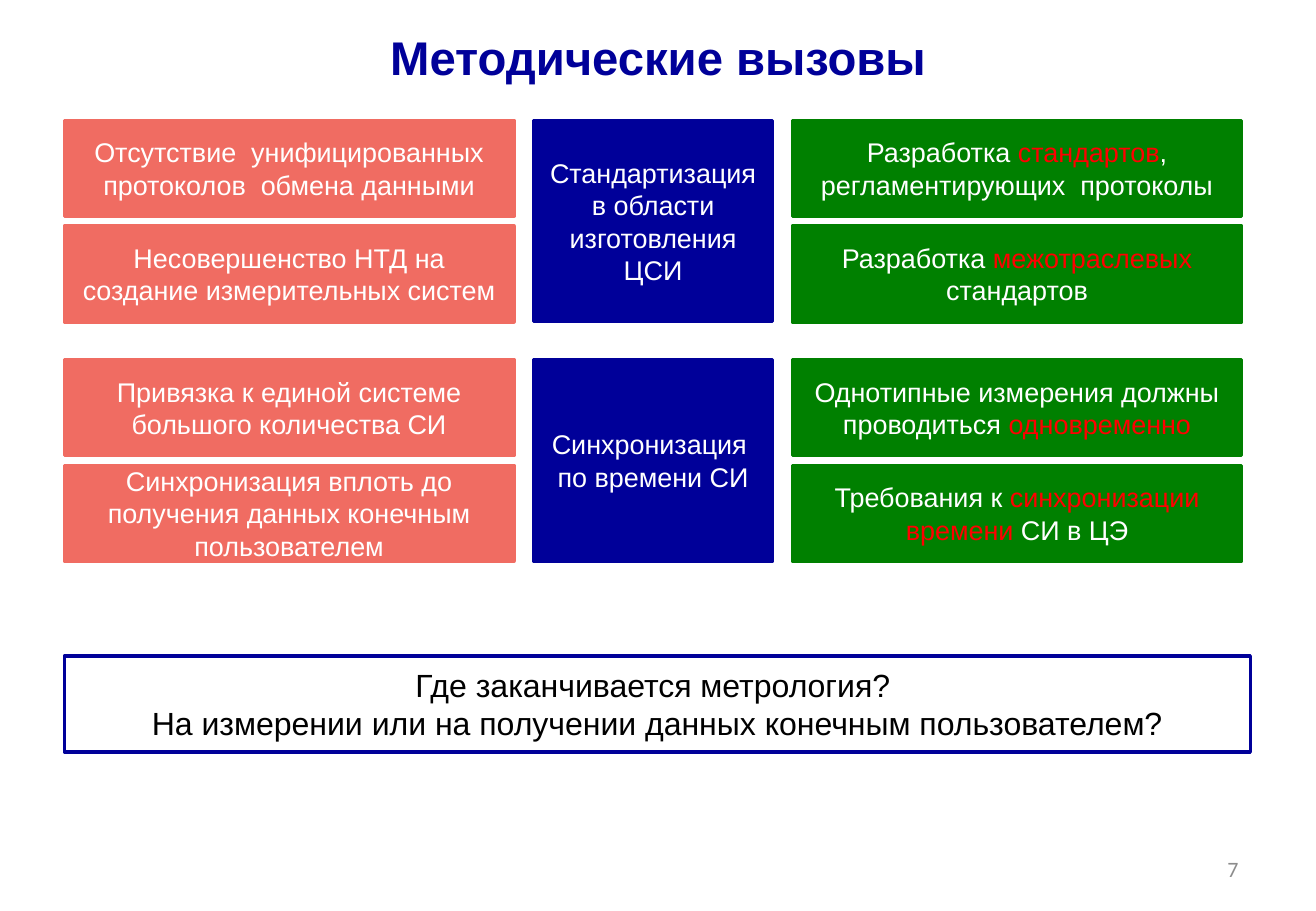
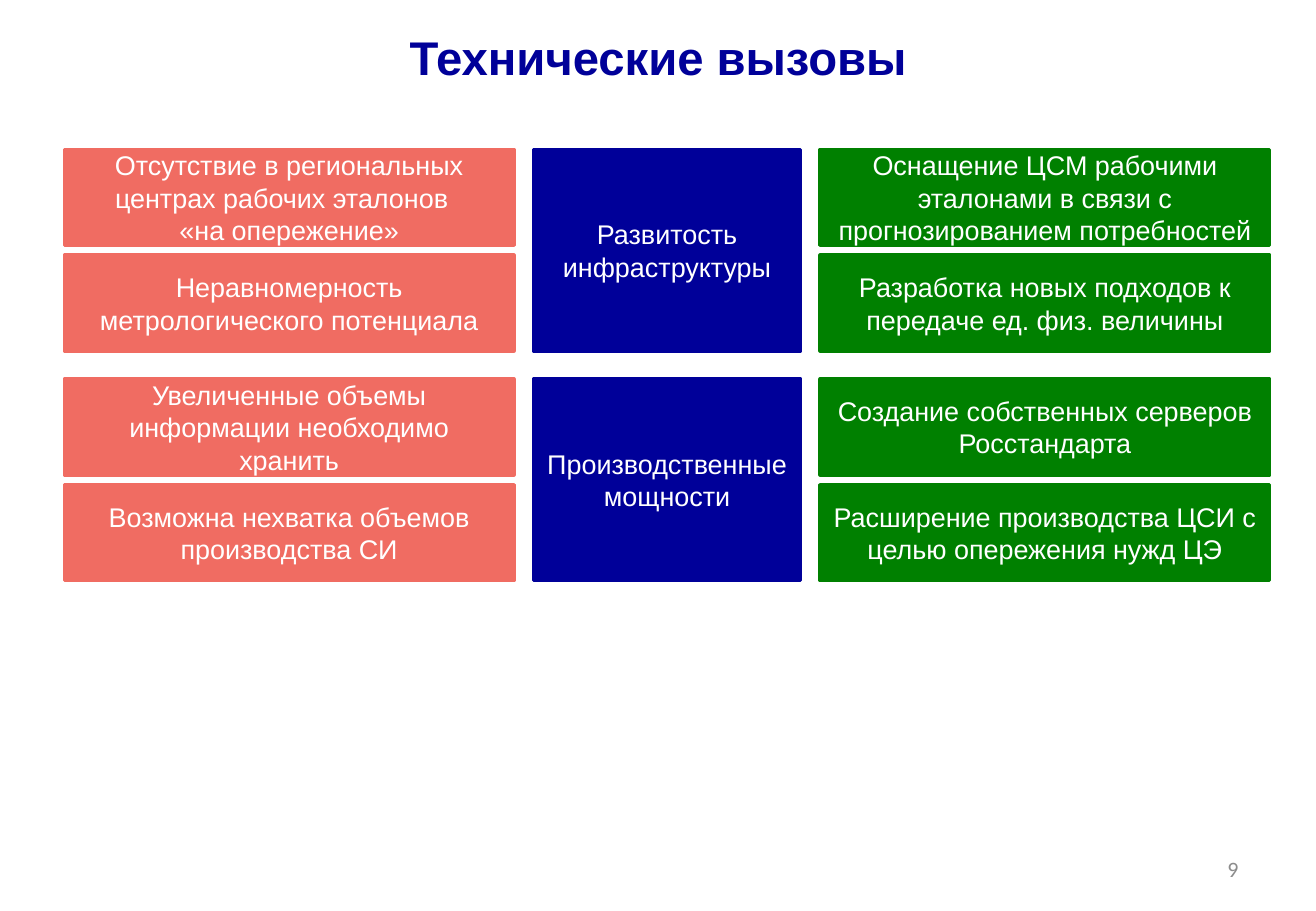
from pptx import Presentation
from pptx.dml.color import RGBColor
from pptx.enum.shapes import MSO_SHAPE as SHAPE
from pptx.enum.text import MSO_ANCHOR as ANCHOR, PP_ALIGN as ALIGN
from pptx.util import Inches, Pt

COLORS = {
    "navy": "000099", "coral": "F06C62", "green": "008000", "red": "FF0000",
    "white": "FFFFFF", "black": "000000", "gray": "8C8C8C",
}
LEFT = 0.53
SIDE_W, BOX_H = 3.7, 0.79
COL_GAP, ROW_STEP = 0.16, 0.87


def rgb(name):
    return RGBColor.from_string(COLORS[name])


def write(tf, text, size=16, color="white", font="Arial", bold=False,
          align=ALIGN.CENTER):
    """Fill a frame: a newline starts a paragraph, *asterisks* mark red words."""
    tf.word_wrap = True
    tf.vertical_anchor = ANCHOR.MIDDLE
    for i, line in enumerate(text.split("\n")):
        p = tf.add_paragraph() if i else tf.paragraphs[0]
        p.alignment = align
        for j, part in enumerate(line.split("*")):
            if not part:
                continue
            r = p.add_run()
            r.text = part
            r.font.name, r.font.size, r.font.bold = font, Pt(size), bold
            r.font.color.rgb = rgb("red" if j % 2 else color)


class Deck:
    def __init__(self):
        self.prs = Presentation()
        self.prs.slide_width, self.prs.slide_height = Inches(10.83), Inches(7.5)
        self.s = None

    def slide(self, title, number):
        self.s = self.prs.slides.add_slide(self.prs.slide_layouts[5])
        sp = self.s.shapes.title
        sp.left, sp.top = Inches(0), Inches(0.13)
        sp.width, sp.height = self.prs.slide_width, Inches(0.68)
        write(sp.text_frame, title, size=28, color="navy", bold=True)
        sp = self.s.shapes.add_textbox(Inches(7.76), Inches(6.95),
                                       Inches(2.53), Inches(0.4))
        write(sp.text_frame, str(number), size=13, color="gray",
              font="Calibri", align=ALIGN.RIGHT)

    def box(self, x, y, w, h, text, fill, line=None, **fmt):
        sp = self.s.shapes.add_shape(SHAPE.RECTANGLE, Inches(x), Inches(y),
                                     Inches(w), Inches(h))
        sp.shadow.inherit = False
        sp.fill.solid()
        sp.fill.fore_color.rgb = rgb(fill)
        sp.line.color.rgb = rgb(line or fill)
        sp.line.width = Pt(2)
        write(sp.text_frame, text, **fmt)

    def group(self, y, topic_w, problems, topic, solutions):
        """Problems on the left, their topic in the middle, solutions on the right."""
        topic_x = LEFT + SIDE_W + COL_GAP
        solution_x = topic_x + topic_w + COL_GAP
        for x, texts, fill in ((LEFT, problems, "coral"),
                               (solution_x, solutions, "green")):
            for i, text in enumerate(texts):
                self.box(x, y + i * ROW_STEP, SIDE_W, BOX_H, text, fill)
        self.box(topic_x, y, topic_w, ROW_STEP + BOX_H, topic, "navy")


def main():
    deck = Deck()

    deck.slide("Методические вызовы", 7)
    deck.group(
        0.99, 1.97,
        ["Отсутствие  унифицированных протоколов  обмена данными",
         "Несовершенство НТД на создание измерительных систем"],
        "Стандартизация в области изготовления ЦСИ",
        ["Разработка *стандартов*, регламентирующих  протоколы",
         "Разработка *межотраслевых* стандартов"])
    deck.group(
        2.96, 1.97,
        ["Привязка к единой системе большого количества СИ",
         "Синхронизация вплоть до получения данных конечным пользователем"],
        "Синхронизация  по времени СИ",
        ["Однотипные измерения должны проводиться *одновременно*",
         "Требования к *синхронизации времени *СИ в ЦЭ"])
    deck.box(LEFT, 5.4, 9.76, BOX_H,
             "Где заканчивается метрология? \n"
             "На измерении или на получении данных конечным пользователем?",
             "white", line="navy", size=19, color="black")

    deck.slide("Технические вызовы", 9)
    deck.group(
        1.23, 2.2,
        ["Отсутствие в региональных центрах рабочих эталонов  \n«на опережение»",
         "Неравномерность метрологического потенциала"],
        "Развитость инфраструктуры",
        ["Оснащение ЦСМ рабочими эталонами в связи с прогнозированием потребностей",
         "Разработка новых подходов к передаче ед. физ. величины"])
    deck.group(
        3.12, 2.2,
        ["Увеличенные объемы информации необходимо хранить",
         "Возможна нехватка объемов производства СИ"],
        "Производственные мощности",
        ["Создание собственных серверов Росстандарта",
         "Расширение производства ЦСИ с целью опережения нужд ЦЭ"])

    deck.prs.save("out.pptx")


if __name__ == "__main__":
    main()
